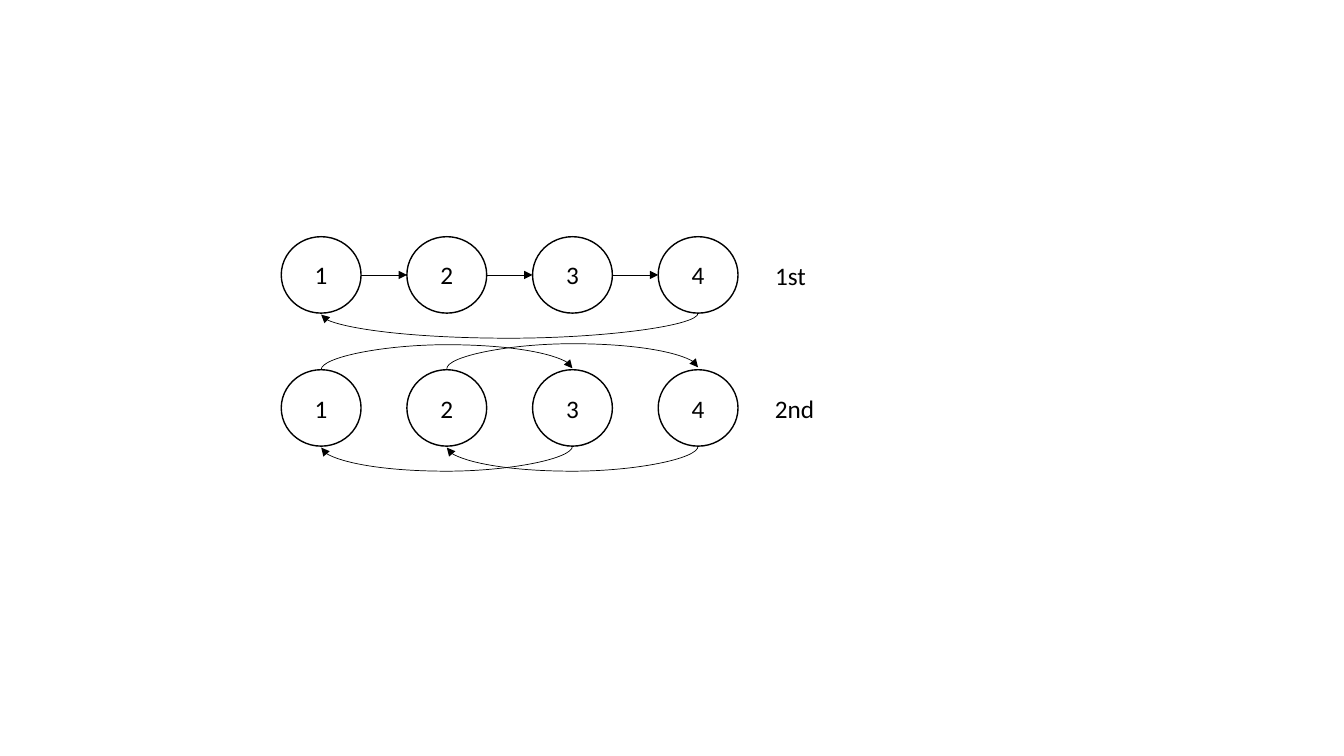
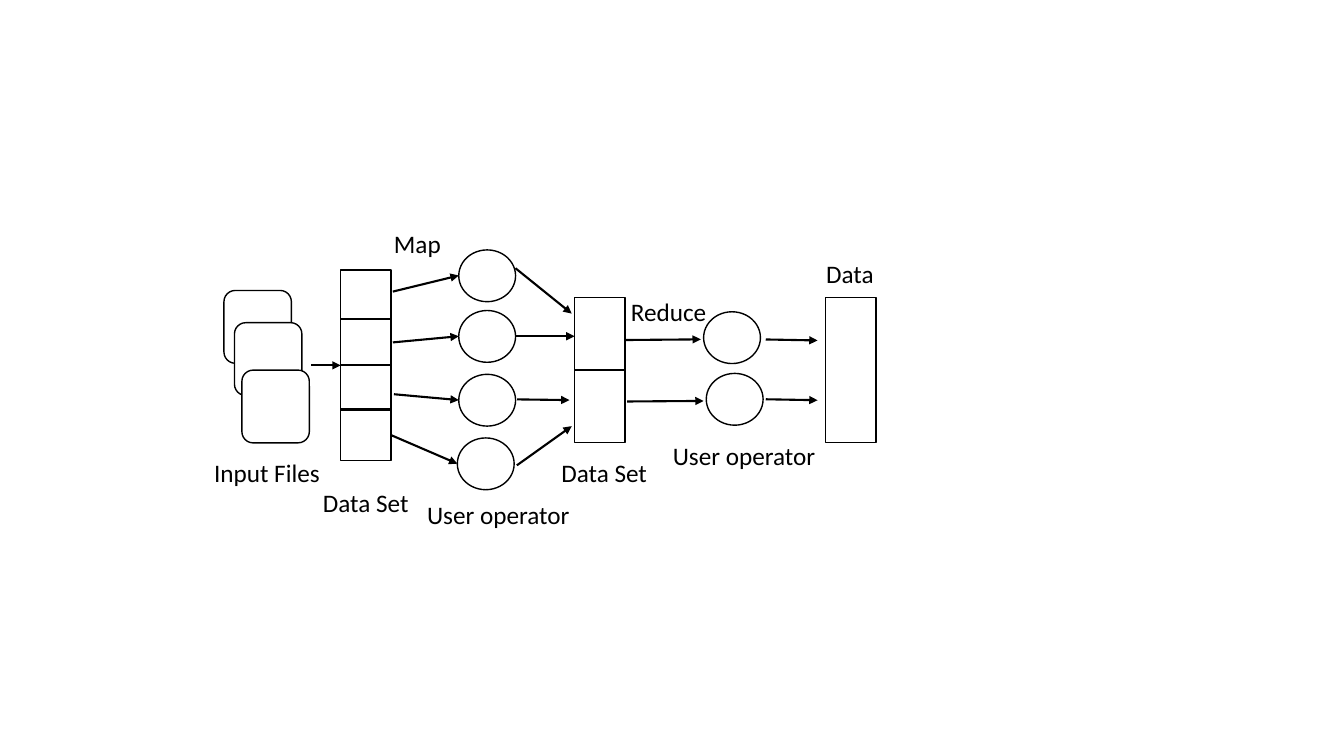
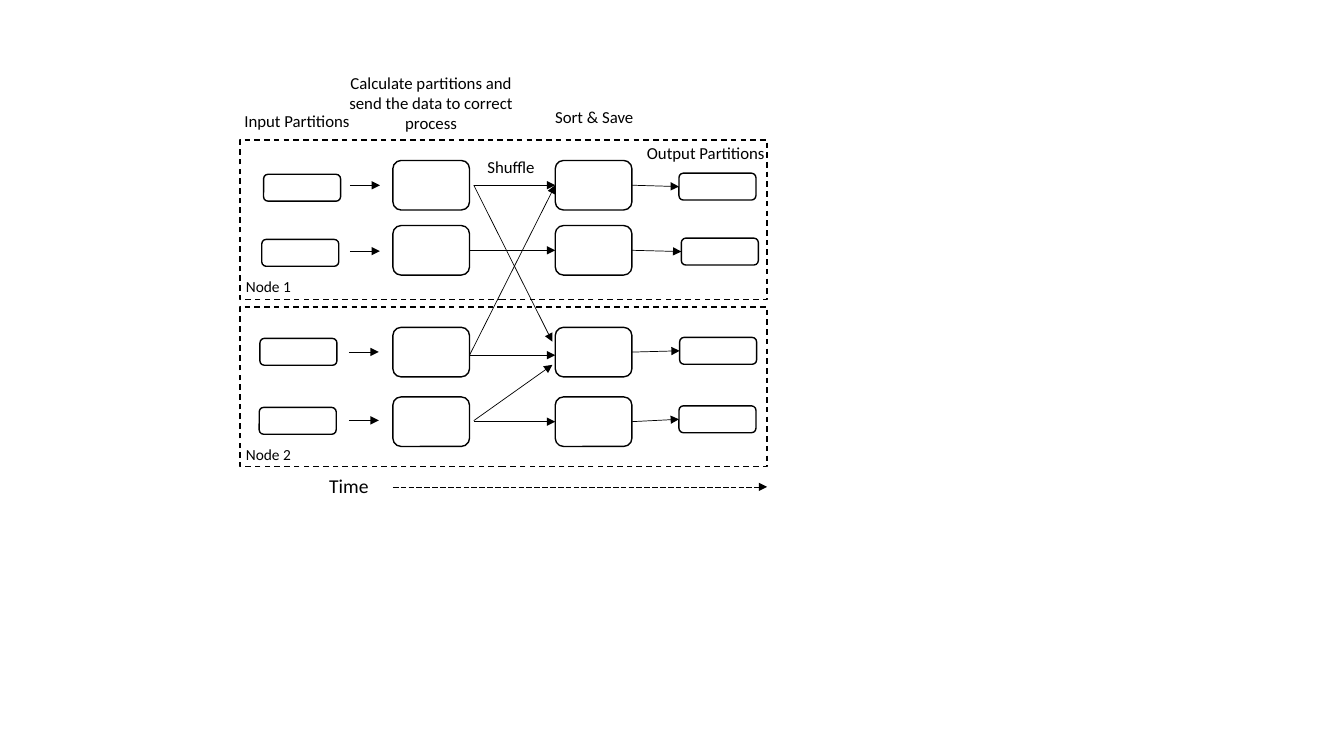
"""Build three data-flow diagrams: circulation, map and reduce, and shuffle."""
from itertools import pairwise
from typing import NamedTuple, Optional

from pptx import Presentation
from pptx.dml.color import RGBColor
from pptx.enum import dml, shapes, text
from pptx.oxml.ns import qn
from pptx.util import Pt
from lxml import etree

BLACK = RGBColor(0, 0, 0)
WHITE = RGBColor(255, 255, 255)
FONT = "Calibri"
LEFT, RIGHT = 1, 3
RECT = shapes.MSO_SHAPE.RECTANGLE
ROUND = shapes.MSO_SHAPE.ROUNDED_RECTANGLE
OVAL = shapes.MSO_SHAPE.OVAL


class Size(NamedTuple):
    """Width and height in points."""
    width: float
    height: float


class Label(NamedTuple):
    """A caption with its place and size in points."""
    words: str
    left: float
    top: float
    width: float
    height: float
    points: float
    wraps: bool = False


class Arrow(NamedTuple):
    """A straight line from one point to another."""
    x1: float
    y1: float
    x2: float
    y2: float


class Row(NamedTuple):
    """One lane of the shuffle diagram."""
    process_top: float
    input_left: float
    input_top: float
    output_left: float
    output_top: float
    arrow_left: float
    arrow_y: float


def style_text(frame, words: str, points: float, centred: bool) -> None:
    """Write one paragraph in the shared font."""
    frame.text = words
    paragraph = frame.paragraphs[0]
    paragraph.alignment = text.PP_ALIGN.CENTER if centred else text.PP_ALIGN.LEFT
    font = paragraph.runs[0].font
    font.name, font.size = FONT, Pt(points)
    font.color.rgb = BLACK


def draw_box(slide, kind, left: float, top: float, size: Size, words: str = "", dash=None):
    """Draw a white shape with a thin black outline."""
    box = slide.shapes.add_shape(kind, Pt(left), Pt(top), Pt(size.width), Pt(size.height))
    box.shadow.inherit = False
    box.fill.solid()
    box.fill.fore_color.rgb = WHITE
    box.line.color.rgb = BLACK
    box.line.width = Pt(1)
    if dash:
        box.line.dash_style = dash
    if words:
        box.text_frame.vertical_anchor = text.MSO_ANCHOR.MIDDLE
        style_text(box.text_frame, words, 18, True)
    return box


def draw_label(slide, label: Label) -> None:
    """Draw a caption without fill or outline."""
    caption = slide.shapes.add_textbox(
        Pt(label.left), Pt(label.top), Pt(label.width), Pt(label.height))
    frame = caption.text_frame
    style_text(frame, label.words, label.points, label.wraps)
    frame.word_wrap = label.wraps
    frame.auto_size = text.MSO_AUTO_SIZE.SHAPE_TO_FIT_TEXT


def draw_line(slide, ends: Arrow, weight: float, head: bool = True, dash=None,
              begin=None, end=None, kind=shapes.MSO_CONNECTOR.STRAIGHT):
    """Draw a black connector, joined to the begin and end boxes if given."""
    line = slide.shapes.add_connector(kind, *(Pt(value) for value in ends))
    if begin is not None:
        line.begin_connect(begin, RIGHT)
    if end is not None:
        line.end_connect(end, LEFT)
    line.line.color.rgb = BLACK
    line.line.width = Pt(weight)
    if dash:
        line.line.dash_style = dash
    properties = line._element.spPr
    if head:
        etree.SubElement(properties.find(qn("a:ln")), qn("a:tailEnd"), type="triangle")
    etree.SubElement(properties, qn("a:effectLst"))
    return line


def draw_loop(slide, start_x: float, end_x: float, y: float, below: bool) -> None:
    """Draw a curved arrow that bulges 18 points below or above its ends."""
    rise, depth = 1, 18
    middle_x = (start_x + end_x) / 2
    middle_y = y + (rise if below else -rise) / 2
    half = abs(end_x - start_x) / 2
    sign = 1 if below else -1
    ends = Arrow(middle_x - sign * rise / 2, middle_y - sign * half,
                 middle_x + sign * rise / 2, middle_y + sign * half)
    loop = draw_line(slide, ends, 0.5, kind=shapes.MSO_CONNECTOR.CURVE)
    properties = loop._element.spPr
    properties.find(qn("a:xfrm")).set("rot", str(90 * 60000))
    guides = properties.find(qn("a:prstGeom")).find(qn("a:avLst"))
    etree.SubElement(guides, qn("a:gd"), name="adj1", fmla=f"val {depth * 100000 // rise}")


def build_circulation(slide) -> None:
    """Draw two rounds of exchange between four processes."""
    circle, pitch, first_left = Size(57, 54.6), 89.75, 200.9
    lefts = [first_left + pitch * index for index in range(4)]
    centres = [left + circle.width / 2 for left in lefts]
    first_top, second_top = 169.1, 264.1
    for top, words, width in ((first_top, "1st", 36.7), (second_top, "2nd", 43.2)):
        for number, left in enumerate(lefts, 1):
            draw_box(slide, OVAL, left, top, circle, str(number))
        draw_label(slide, Label(words, 546.5, top + 13, width, 29, 18))
    arrow_y = first_top + circle.height / 2
    for left, following in pairwise(lefts):
        draw_line(slide, Arrow(left + circle.width, arrow_y, following, arrow_y), 0.5)
    draw_loop(slide, centres[3], centres[0], first_top + circle.height, True)
    for near, far in ((0, 2), (1, 3)):
        draw_loop(slide, centres[near], centres[far], second_top - near * 0.7, False)
        draw_loop(slide, centres[far], centres[near], second_top + circle.height, True)


def build_map_reduce(slide) -> None:
    """Draw the path from input files through map and reduce to data."""
    operator, file, weight = Size(40.6, 37), Size(48.2, 52), 1.5
    data_set = draw_box(slide, RECT, 243.4, 193, Size(36, 136))
    for left in (410.4, 589.7):
        draw_box(slide, RECT, left, 212.6, Size(36, 103.6))
    for left, top in ((160, 207.5), (167.5, 230.5), (172.8, 264.4)):
        draw_box(slide, ROUND, left, top, file)
    for left, top in ((327.7, 178.5), (327.7, 221.8), (327.7, 267.4), (326.7, 312.8),
                      (502.6, 222.7), (504.5, 266.7)):
        draw_box(slide, OVAL, left, top, operator)
    for left, y in ((243.4, 228), (243.4, 261), (243.9, 292.5), (411, 264.4)):
        draw_line(slide, Arrow(left, y, left + 35.2, y), weight, head=False)
    draw_line(slide, Arrow(222.3, 261, 243.4, 261), weight, end=data_set)
    for ends in (
        Arrow(280.6, 208.3, 327.7, 196.8), Arrow(280.6, 244.6, 327.7, 240.2),
        Arrow(281.4, 281.6, 327.7, 285.8), Arrow(279.8, 311, 326.7, 331.2),
        Arrow(368.2, 191.6, 408.4, 224), Arrow(368.2, 240.2, 410.4, 240.2),
        Arrow(369.4, 285.3, 406.8, 285.8), Arrow(369.2, 332.4, 408.4, 304.4),
        Arrow(446.6, 242.9, 500.6, 242.4), Arrow(448, 286.8, 502.6, 286.4),
        Arrow(547, 242.5, 584, 243.2), Arrow(547, 285.2, 584, 285.9),
    ):
        draw_line(slide, ends, weight)
    for words, left, top, width in (
        ("Input Files", 145.9, 323.4, 90.7), ("Data Set", 223.6, 344.2, 76.3),
        ("Map", 274.3, 159.4, 48.2), ("User operator", 298, 352.8, 117.4),
        ("Data Set", 393.9, 323.4, 76.3), ("Reduce", 443.6, 208.2, 69.1),
        ("User operator", 473.5, 311.2, 117.4), ("Data", 583, 180.9, 49),
    ):
        draw_label(slide, Label(words, left, top, width, 29, 18))


def build_shuffle(slide) -> None:
    """Draw two nodes that shuffle partitions over time."""
    node, process, partition = Size(376.6, 113.9), Size(54.8, 35.4), Size(55, 19.2)
    node_left, send_left, sort_left, weight = 171.4, 280.6, 396.6, 0.5
    for top in (100, 219.4):
        draw_box(slide, RECT, node_left, top, node, dash=dml.MSO_LINE.DASH)
    rows = (
        Row(114.6, 188.3, 124.5, 485, 123.7, 250, 132.4),
        Row(161.1, 187, 171, 486.7, 170.1, 250, 179.4),
        Row(233.8, 185.7, 241.7, 485.5, 241, 249.2, 251.4),
        Row(283.5, 185.2, 291, 485, 289.9, 249.2, 300.3),
    )
    senders, sorters = [], []
    for row in rows:
        draw_box(slide, ROUND, row.input_left, row.input_top, partition)
        senders.append(draw_box(slide, ROUND, send_left, row.process_top, process))
        sorters.append(draw_box(slide, ROUND, sort_left, row.process_top, process))
        output = draw_box(slide, ROUND, row.output_left, row.output_top, partition)
        draw_line(slide, Arrow(row.arrow_left, row.arrow_y, row.arrow_left + 21.4, row.arrow_y),
                  weight)
        y = row.process_top + process.height / 2
        draw_line(slide, Arrow(sort_left + process.width, y, row.output_left, y), weight,
                  begin=sorters[-1], end=output)
    for ends, begin, end in (
        (Arrow(338.4, 132.3, 396.6, 132.3), None, sorters[0]),
        (Arrow(338.4, 132.3, 394.6, 244.1), None, None),
        (Arrow(335.4, 178.8, 396.6, 178.8), senders[1], sorters[1]),
        (Arrow(335.4, 253.7, 396.6, 132.3), None, sorters[0]),
        (Arrow(335.4, 253.7, 396.6, 253.7), None, None),
        (Arrow(338.4, 300.5, 394.6, 260.6), None, None),
        (Arrow(338.4, 301.2, 396.6, 301.2), None, sorters[3]),
    ):
        draw_line(slide, ends, weight, begin=begin, end=end)
    draw_line(slide, Arrow(send_left, 347.8, node_left + node.width, 347.8), weight,
              dash=dml.MSO_LINE.LONG_DASH)
    for label in (
        Label("Input Partitions", 167.5, 75.8, 90.7, 21.8, 12),
        Label("Calculate partitions and send the data to correct process",
              241.7, 48.4, 132.5, 51, 12, True),
        Label("Sort & Save", 389.4, 73, 71.3, 21.8, 12),
        Label("Shuffle", 341, 108.4, 49, 21.8, 12),
        Label("Output Partitions", 455, 98.7, 99.4, 21.8, 12),
        Label("Node 1", 168.5, 194.5, 46.8, 20.6, 11),
        Label("Node 2", 168.5, 314.2, 46.8, 20.6, 11),
        Label("Time", 228, 335, 43.2, 24.2, 14),
    ):
        draw_label(slide, label)


def main() -> None:
    """Build and save the presentation."""
    deck = Presentation()
    deck.slide_width, deck.slide_height = Pt(960), Pt(540)
    blank = deck.slide_layouts[6]
    for build in (build_circulation, build_map_reduce, build_shuffle):
        build(deck.slides.add_slide(blank))
    deck.save("out.pptx")


if __name__ == "__main__":
    main()
